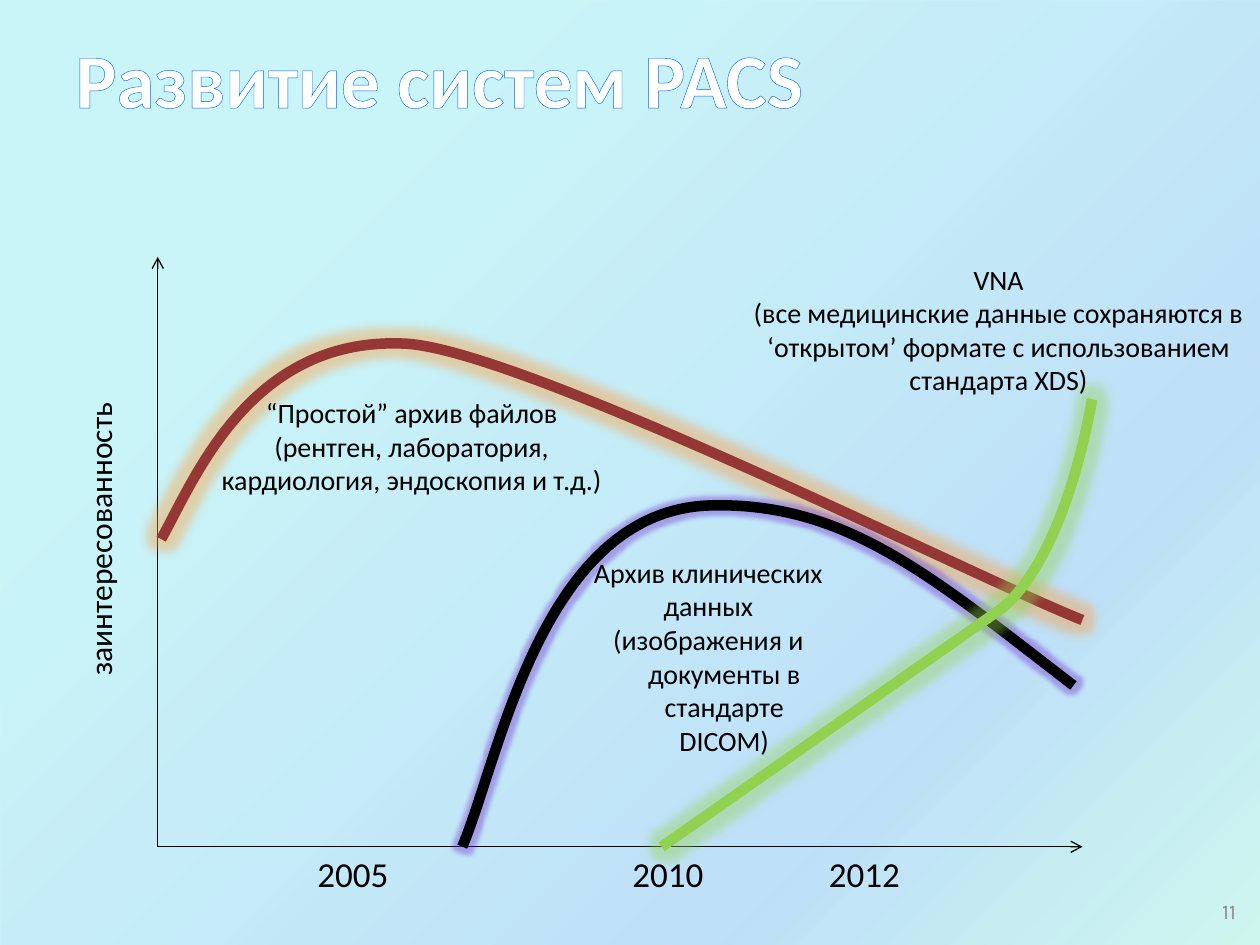
from dataclasses import dataclass

from lxml import etree
from pptx import Presentation
from pptx.dml.color import RGBColor
from pptx.enum.shapes import MSO_CONNECTOR, MSO_SHAPE
from pptx.enum.text import MSO_ANCHOR, MSO_AUTO_SIZE, PP_ALIGN
from pptx.oxml.ns import qn
from pptx.shapes.base import BaseShape
from pptx.slide import Slide
from pptx.text.text import TextFrame
from pptx.util import Cm, Pt

LEFT, CENTER, RIGHT = PP_ALIGN.LEFT, PP_ALIGN.CENTER, PP_ALIGN.RIGHT
TOP, MIDDLE = MSO_ANCHOR.TOP, MSO_ANCHOR.MIDDLE
FIT, FIXED = MSO_AUTO_SIZE.SHAPE_TO_FIT_TEXT, MSO_AUTO_SIZE.NONE
STRAIGHT = MSO_CONNECTOR.STRAIGHT
RECTANGLE = MSO_SHAPE.RECTANGLE
TITLE_ONLY = 5
BLACK = "000000"
HANGING = Cm(0.64)
BASELINE = 17.07
ORIGIN = 3.18

Point = tuple[float, float]


@dataclass
class Label:
    frame: tuple[float, float, float, float]
    lines: list[str]
    size: int
    align: PP_ALIGN = LEFT
    wrap: bool = False
    rotation: int = 0
    font: str = "Calibri"
    color: str = BLACK
    anchor: MSO_ANCHOR = TOP
    autosize: MSO_AUTO_SIZE = FIT


@dataclass
class Curve:
    points: list[Point]
    color: str
    glow: str
    radius: int


BACKGROUND_STOPS = [(25, "21D6E0", 23), (75, "0087E6", 25),
                    (100, "03D4A8", 18), (100, "005CBF", 26)]

AXES = [((ORIGIN, BASELINE), (21.82, BASELINE)),
        ((ORIGIN, BASELINE), (ORIGIN, 5.18))]

CURVES = [
    Curve([(3.25, 10.87), (3.94, 9.63), (5.05, 6.76), (8.2, 6.93),
           (10.62, 7.09), (19.63, 11.63), (21.82, 12.5)], "953735", "FF9933", 11),
    Curve([(9.32, BASELINE), (10.08, 15.27), (10.92, 10.31), (14.3, 10.19),
           (17.04, 10.11), (18.77, 11.61), (21.64, 13.82)], BLACK, "7030D0", 5),
    Curve([(22.02, 8.05), (22, 8.05), (21.56, 11.13), (20.19, 12.27),
           (13.34, BASELINE)], "92D050", "92D050", 11),
]

YEARS = [("2005", 6.15), ("2010", 12.5), ("2012", 16.46)]

LABELS = [Label((left, BASELINE, 2.11, 1.12), [year], 20) for year, left in YEARS] + [
    Label((-1.04, 10.31, 6.1, 1.02), ["заинтересованность"], 18, rotation=270),
    Label((4.17, 7.85, 8.26, 2.31),
          ["“Простой” архив файлов", "(рентген, лаборатория,",
           "кардиология, эндоскопия и т.д.)"], 16, CENTER),
    Label((11.56, 11.07, 5.44, 4.37),
          ["Архив клинических данных",
           "(изображения и документы в стандарте DICOM)"], 16, CENTER, wrap=True),
    Label((14.86, 5.16, 10.54, 3),
          ["VNA", "(все медицинские данные сохраняются в",
           "‘открытом’ формате с использованием", "стандарта XDS)"], 16, CENTER),
    Label((19.25, 17.86, 5.92, 1.02), ["11"], 12, RIGHT, wrap=True, font="Karla",
          color="8C8C8C", anchor=MIDDLE, autosize=FIXED),
]


def rgb(value: str) -> RGBColor:
    return RGBColor.from_string(value)


def add_node(parent: etree._Element, tag: str, **values: object) -> etree._Element:
    return etree.SubElement(parent, qn(tag), {key: str(value) for key, value in values.items()})


def add_color(parent: etree._Element, color: str, opacity: int = 100) -> None:
    node = add_node(parent, "a:srgbClr", val=color)
    add_node(node, "a:alpha", val=opacity * 1000)


def apply(target: object, formats: dict[str, object]) -> None:
    for name, value in formats.items():
        setattr(target, name, value)


def draw_background(page: Slide) -> None:
    box = page.shapes.add_shape(RECTANGLE, 0, 0, Cm(25.4), Cm(19.48))
    box.shadow.inherit = False
    box.line.fill.background()
    box.fill.gradient()
    gradient = box.element.spPr.find(qn("a:gradFill"))
    for child in list(gradient):
        gradient.remove(child)
    stops = add_node(gradient, "a:gsLst")
    for position, color, opacity in BACKGROUND_STOPS:
        add_color(add_node(stops, "a:gs", pos=position * 1000), color, opacity)
    add_node(gradient, "a:lin", ang=45 * 60000, scaled=0)
    page.shapes.element.insert(2, box.element)


def draw_title(page: Slide, text: str) -> None:
    title = page.shapes.title
    apply(title, {"left": Cm(1.27), "top": Cm(-0.03), "width": Cm(22.86), "height": Cm(3.18)})
    title.text_frame.vertical_anchor = MIDDLE
    para = title.text_frame.paragraphs[0]
    para.alignment = LEFT
    span = para.add_run()
    span.text = text
    apply(span.font, {"size": Pt(44), "bold": True, "name": "Calibri"})
    span.font.color.rgb = rgb("FFFFFF")
    outline = etree.Element(qn("a:ln"), {"w": str(Pt(1.45))})
    add_color(add_node(outline, "a:solidFill"), "0066FF")
    span.font.fill
    span.element.get_or_add_rPr().insert(0, outline) if hasattr(span, "element") else \
        span._r.get_or_add_rPr().insert(0, outline)


def draw_axis(page: Slide, start: Point, end: Point) -> None:
    axis = page.shapes.add_connector(STRAIGHT, *map(Cm, start + end))
    axis.line.width = Pt(0.75)
    axis.line.color.rgb = rgb(BLACK)
    properties = axis.element.spPr
    add_node(properties.find(qn("a:ln")), "a:tailEnd", type="arrow")
    add_node(properties, "a:effectLst")


def bend_segments(shape: BaseShape) -> None:
    segments = list(shape.element.iter(qn("a:lnTo")))
    for first in range(0, len(segments) - 2, 3):
        group = segments[first:first + 3]
        bend = etree.Element(qn("a:cubicBezTo"))
        group[0].addprevious(bend)
        for segment in group:
            bend.append(segment[0])
            segment.getparent().remove(segment)


def draw_curve(page: Slide, curve: Curve) -> None:
    points = [(Cm(left), Cm(top)) for left, top in curve.points]
    builder = page.shapes.build_freeform(*points[0])
    builder.add_line_segments(points[1:], close=False)
    shape = builder.convert_to_shape()
    bend_segments(shape)
    shape.fill.background()
    shape.line.width = Pt(6)
    shape.line.color.rgb = rgb(curve.color)
    shape.shadow.inherit = False
    effects = shape.element.spPr.find(qn("a:effectLst"))
    add_color(add_node(effects, "a:glow", rad=Pt(curve.radius)), curve.glow, 40)


def write_lines(frame: TextFrame, label: Label) -> None:
    for index, text in enumerate(label.lines):
        para = frame.paragraphs[0] if index == 0 else frame.add_paragraph()
        para.alignment = label.align
        if index:
            properties = para._p.get_or_add_pPr()
            properties.set("marL", str(HANGING))
            properties.set("indent", str(-HANGING))
        span = para.add_run()
        span.text = text
        apply(span.font, {"size": Pt(label.size), "name": label.font})
        span.font.color.rgb = rgb(label.color)


def draw_label(page: Slide, label: Label) -> None:
    box = page.shapes.add_textbox(*map(Cm, label.frame))
    box.rotation = label.rotation
    apply(box.text_frame, {"word_wrap": label.wrap, "auto_size": label.autosize,
                           "vertical_anchor": label.anchor})
    write_lines(box.text_frame, label)


def main() -> None:
    deck = Presentation()
    apply(deck, {"slide_width": Cm(25.4), "slide_height": Cm(19.05)})
    page = deck.slides.add_slide(deck.slide_layouts[TITLE_ONLY])
    draw_background(page)
    draw_title(page, "Развитие систем PACS")
    for start, end in AXES:
        draw_axis(page, start, end)
    for curve in CURVES:
        draw_curve(page, curve)
    for label in LABELS:
        draw_label(page, label)
    deck.save("out.pptx")


if __name__ == "__main__":
    main()
